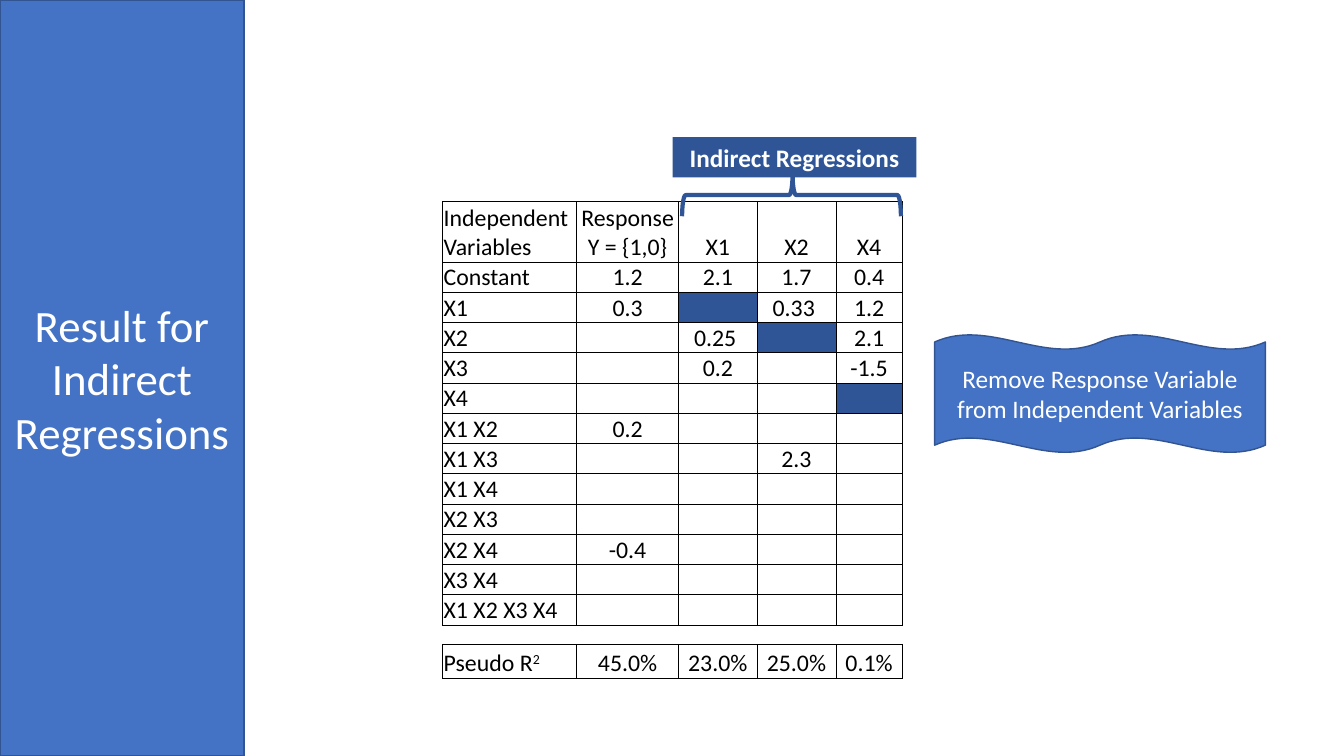
import pptx
import pptx.dml.color
import pptx.enum.shapes
import pptx.enum.text
import pptx.oxml.ns
import pptx.util
from lxml import etree
from pptx.util import Inches

COLORS = {
    "blue": "4472C4",
    "edge": "325491",
    "navy": "2F5597",
    "white": "FFFFFF",
    "black": "000000",
}
FONT = "Calibri"
FILLED = "#"
COLUMN_WIDTHS = [1.33, 1.01, 0.78, 0.78, 0.66]
ROWS = [
    ["Independent Variables", "Response Y = {1,0}", "X1", "X2", "X4"],
    ["Constant", "1.2", "2.1", "1.7", "0.4"],
    ["X1", "0.3", FILLED, "0.33 ", "1.2"],
    ["X2", "", "0.25 ", FILLED, "2.1"],
    ["X3", "", "0.2", "", "-1.5"],
    ["X4", "", "", "", FILLED],
    ["X1 X2", "0.2", "", "", ""],
    ["X1 X3", "", "", "2.3", ""],
    ["X1 X4", "", "", "", ""],
    ["X2 X3", "", "", "", ""],
    ["X2 X4", "-0.4", "", "", ""],
    ["X3 X4", "", "", "", ""],
    ["X1 X2 X3 X4", "", "", "", ""],
    ["", "", "", "", ""],
    ["Pseudo R", "45.0%", "23.0%", "25.0%", "0.1%"],
]
SPACER_ROW = 13
ROW_HEIGHTS = [0.6] + [0.3] * 12 + [0.19, 0.34]


def rgb(name):
    """Return the named colour."""
    return pptx.dml.color.RGBColor.from_string(COLORS[name])


def add_run(p, text, size, color, bold=False):
    """Add a formatted run to a paragraph."""
    r = p.add_run()
    r.text = text
    r.font.name = FONT
    r.font.size = pptx.util.Pt(size)
    r.font.bold = bold
    r.font.color.rgb = rgb(color)
    return r


def style_shape(sp, fill=None, line=None, width=1):
    """Set the fill and line of a shape."""
    if fill:
        sp.fill.solid()
        sp.fill.fore_color.rgb = rgb(fill)
    else:
        sp.fill.background()
    if line:
        sp.line.color.rgb = rgb(line)
        sp.line.width = pptx.util.Pt(width)
    else:
        sp.line.fill.background()


def write_centred(sp, text, size, bold=False):
    """Write white centred text in a shape."""
    tf = sp.text_frame
    tf.word_wrap = True
    tf.vertical_anchor = pptx.enum.text.MSO_ANCHOR.MIDDLE
    p = tf.paragraphs[0]
    p.alignment = pptx.enum.text.PP_ALIGN.CENTER
    add_run(p, text, size, "white", bold)


def add_preset(s, kind, box, **style):
    """Add a preset shape without a shadow."""
    shape_type = getattr(pptx.enum.shapes.MSO_SHAPE, kind)
    sp = s.shapes.add_shape(shape_type, *map(Inches, box))
    sp.shadow.inherit = False
    style_shape(sp, **style)
    return sp


def add_title(s, text, box):
    """Turn the title placeholder into the side panel."""
    sp = s.shapes.title
    sp.left, sp.top, sp.width, sp.height = map(Inches, box)
    style_shape(sp, "blue", "edge")
    write_centred(sp, text, 32)
    sp.text_frame.auto_size = pptx.enum.text.MSO_AUTO_SIZE.NONE


def set_borders(cell, visible):
    """Draw the chosen sides of a cell and clear the others."""
    qn = pptx.oxml.ns.qn
    props = cell._tc.get_or_add_tcPr()
    for side in "LRTB":
        ln = etree.SubElement(props, qn("a:ln" + side), w="6350")
        if side in visible:
            fill = etree.SubElement(ln, qn("a:solidFill"))
            etree.SubElement(fill, qn("a:srgbClr"), val=COLORS["black"])
        else:
            etree.SubElement(ln, qn("a:noFill"))


def fill_cell(cell, text, centred, spacer):
    """Format one table cell and write its text."""
    set_borders(cell, "TB" if spacer else "LRTB")
    cell.margin_left = cell.margin_right = cell.margin_top = Inches(0.01)
    cell.margin_bottom = 0
    cell.vertical_anchor = pptx.enum.text.MSO_ANCHOR.BOTTOM
    if text == FILLED:
        cell.fill.solid()
        cell.fill.fore_color.rgb = rgb("navy")
    else:
        cell.fill.background()
    p = cell.text_frame.paragraphs[0]
    if centred:
        p.alignment = pptx.enum.text.PP_ALIGN.CENTER
    if text and text != FILLED:
        add_run(p, text, 17, "black")
    else:
        size = "800" if spacer else "1700"
        etree.SubElement(p._p, pptx.oxml.ns.qn("a:endParaRPr"), sz=size)


def add_results_table(s, left, top):
    """Add the table of regression coefficients."""
    frame = s.shapes.add_table(
        len(ROWS), len(COLUMN_WIDTHS), Inches(left), Inches(top),
        Inches(sum(COLUMN_WIDTHS)), Inches(sum(ROW_HEIGHTS)))
    table = frame.table
    table.first_row = table.horz_banding = False
    for column, width in zip(table.columns, COLUMN_WIDTHS):
        column.width = Inches(width)
    for row, height in zip(table.rows, ROW_HEIGHTS):
        row.height = Inches(height)
    for i, values in enumerate(ROWS):
        for j, text in enumerate(values):
            fill_cell(table.cell(i, j), text, j > 0, i == SPACER_ROW)
    p = table.cell(len(ROWS) - 1, 0).text_frame.paragraphs[0]
    exponent = add_run(p, "2", 17, "black")
    exponent.font._element.set("baseline", "30000")


def add_brace(s, box):
    """Add the brace that spans the indirect regressions."""
    brace = add_preset(s, "LEFT_BRACE", box, line="navy", width=3)
    brace.rotation = 90
    brace.adjustments[0] = 0.083
    brace.adjustments[1] = 0.495


def main():
    """Build the slide and save it."""
    prs = pptx.Presentation()
    prs.slide_width, prs.slide_height = Inches(13.33), Inches(7.5)
    s = prs.slides.add_slide(prs.slide_layouts[5])
    add_title(s, "Result for Indirect Regressions", (0, 0, 2.42, 7.5))
    add_results_table(s, 4.39, 2)
    add_brace(s, (7.64, 0.85, 0.42, 2.17))
    label = add_preset(s, "RECTANGLE", (6.67, 1.36, 2.42, 0.4), fill="navy")
    write_centred(label, "Indirect Regressions", 18, bold=True)
    note = add_preset(s, "DOUBLE_WAVE", (9.27, 3.32, 3.28, 1.17),
                      fill="blue", line="edge")
    write_centred(note, "Remove Response Variable from Independent Variables", 18)
    prs.save("out.pptx")


if __name__ == "__main__":
    main()
